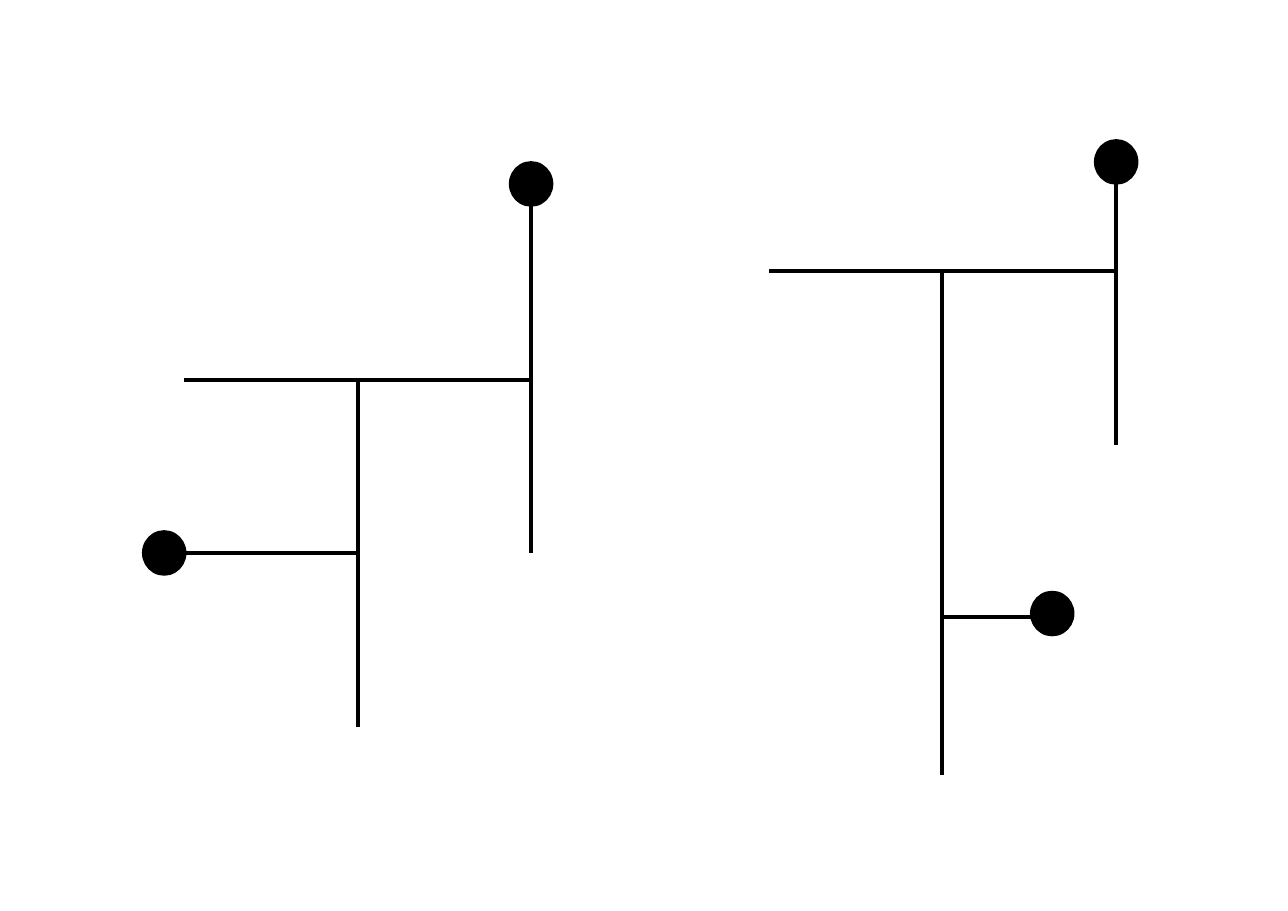
"""Draw two branching line figures with round ends on one slide."""
from dataclasses import dataclass

from lxml.etree import SubElement
from pptx import Presentation
from pptx.dml.color import RGBColor
from pptx.enum.shapes import MSO_CONNECTOR, MSO_SHAPE
from pptx.oxml.ns import qn
from pptx.shapes.shapetree import GroupShapes
from pptx.util import Inches, Pt

BLACK = RGBColor(0, 0, 0)
DOT_WIDTH = 0.4
DOT_HEIGHT = 0.39

Point = tuple[float, float]


@dataclass(frozen=True)
class Line:
    start: Point
    end: Point


@dataclass(frozen=True)
class Figure:
    lines: list[Line]
    dots: list[Point]


LEFT = Figure(
    lines=[
        Line((1.68, 5.02), (3.25, 5.02)),
        Line((4.82, 1.87), (4.82, 3.45)),
        Line((3.25, 3.45), (4.82, 3.45)),
        Line((1.67, 3.45), (3.25, 3.45)),
        Line((4.82, 3.45), (4.82, 5.02)),
        Line((3.25, 3.45), (3.25, 5.02)),
        Line((3.25, 5.02), (3.25, 6.6)),
    ],
    dots=[(4.82, 1.67), (1.49, 5.02)],
)
RIGHT = Figure(
    lines=[
        Line((8.57, 5.6), (9.36, 5.6)),
        Line((10.13, 1.67), (10.13, 2.46)),
        Line((8.55, 2.46), (10.13, 2.46)),
        Line((6.98, 2.46), (8.55, 2.46)),
        Line((10.13, 2.46), (10.13, 4.04)),
        Line((8.55, 2.46), (8.55, 5.61)),
        Line((8.55, 5.47), (8.55, 7.04)),
    ],
    dots=[(10.13, 1.47), (9.55, 5.57)],
)


def draw_line(shapes: GroupShapes, line: Line) -> None:
    ends = [Inches(value) for value in (*line.start, *line.end)]
    stroke = shapes.add_connector(MSO_CONNECTOR.STRAIGHT, *ends)
    stroke.line.color.rgb = BLACK
    stroke.line.width = Pt(3)
    SubElement(stroke.element.spPr, qn("a:effectLst"))


def draw_dot(shapes: GroupShapes, center: Point) -> None:
    x, y = center
    dot = shapes.add_shape(
        MSO_SHAPE.FLOWCHART_CONNECTOR,
        Inches(x - DOT_WIDTH / 2),
        Inches(y - DOT_HEIGHT / 2),
        Inches(DOT_WIDTH),
        Inches(DOT_HEIGHT),
    )
    dot.rotation = 90
    dot.shadow.inherit = False
    dot.fill.solid()
    dot.fill.fore_color.rgb = BLACK
    dot.line.color.rgb = BLACK
    dot.line.width = Pt(1)


def main() -> None:
    deck = Presentation()
    deck.slide_width = Inches(11.69)
    deck.slide_height = Inches(8.27)
    slide = deck.slides.add_slide(deck.slide_layouts[6])
    for figure in (LEFT, RIGHT):
        group = slide.shapes.add_group_shape()
        for line in figure.lines:
            draw_line(group.shapes, line)
        for center in figure.dots:
            draw_dot(group.shapes, center)
    deck.save("out.pptx")


if __name__ == "__main__":
    main()
